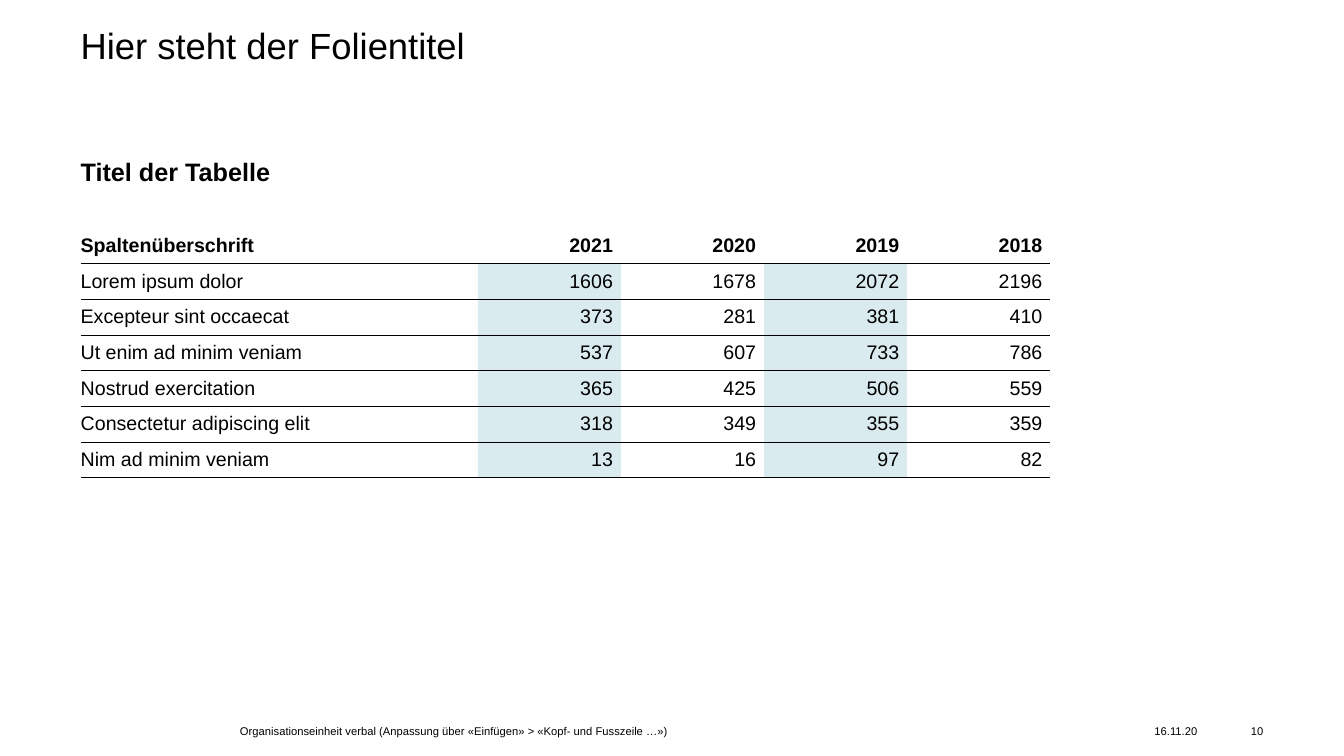
import dataclasses

import lxml.etree
import pptx
import pptx.dml.color
import pptx.enum.text
import pptx.oxml.ns
import pptx.util

Inches = pptx.util.Inches
ALIGN = pptx.enum.text.PP_ALIGN
ANCHOR = pptx.enum.text.MSO_ANCHOR

BLACK = "000000"
WHITE = "FFFFFF"
TEAL = "007A96"
FONT = "Arial"
HEADER = ["Spaltenüberschrift", "2021", "2020", "2019", "2018"]
ROWS = [
    ["Lorem ipsum dolor", 1606, 1678, 2072, 2196],
    ["Excepteur sint occaecat", 373, 281, 381, 410],
    ["Ut enim ad minim veniam", 537, 607, 733, 786],
    ["Nostrud exercitation", 365, 425, 506, 559],
    ["Consectetur adipiscing elit", 318, 349, 355, 359],
    ["Nim ad minim veniam", 13, 16, 97, 82],
]
TABLE_HEIGHT = 2.48
COLUMN_WIDTHS = [3.94] + [1.42] * 4


@dataclasses.dataclass
class Label:
    text: str
    left: float
    top: float
    width: float
    height: float
    size: float
    bold: bool = False
    align: ALIGN = ALIGN.LEFT
    anchor: ANCHOR = ANCHOR.TOP
    line_spacing: float = 1.0


FOOTER = {"top": 7.13, "height": 0.24, "size": 8, "anchor": ANCHOR.MIDDLE}
LABELS = [
    Label("Hier steht der Folientitel", 0.8, 0.28, 11.73, 0.98, 26, line_spacing=0.9),
    Label("Titel der Tabelle", 0.8, 1.55, 11.73, 0.43, 18, bold=True),
    Label("Organisationseinheit verbal (Anpassung über «Einfügen» > «Kopf- und Fusszeile …»)",
          left=2.38, width=5.91, **FOOTER),
    Label("16.11.20", left=11.45, width=0.67, **FOOTER),
    Label("10", left=12.18, width=0.35, align=ALIGN.RIGHT, **FOOTER),
]


def color(value: str) -> pptx.dml.color.RGBColor:
    return pptx.dml.color.RGBColor.from_string(value)


def write_text(frame, text: str, *, size: float, bold: bool = False,
               align: ALIGN = ALIGN.LEFT, line_spacing: float = 1.0) -> None:
    frame.word_wrap = True
    paragraph = frame.paragraphs[0]
    paragraph.alignment = align
    paragraph.line_spacing = line_spacing
    run = paragraph.add_run()
    run.text = text
    run.font.name = FONT
    run.font.size = pptx.util.Pt(size)
    run.font.bold = bold
    run.font.color.rgb = color(BLACK)


def add_label(slide, label: Label) -> None:
    shape = slide.shapes.add_textbox(Inches(label.left), Inches(label.top),
                                     Inches(label.width), Inches(label.height))
    frame = shape.text_frame
    frame.margin_left = frame.margin_top = frame.margin_right = frame.margin_bottom = 0
    frame.vertical_anchor = label.anchor
    write_text(frame, label.text, size=label.size, bold=label.bold,
               align=label.align, line_spacing=label.line_spacing)


def add_child(parent, tag: str, **attributes: str):
    return lxml.etree.SubElement(parent, pptx.oxml.ns.qn(tag), **attributes)


def set_borders(cell, top: float, bottom: float) -> None:
    properties = cell._tc.get_or_add_tcPr()
    for side, width in {"L": 0, "R": 0, "T": top, "B": bottom}.items():
        line = add_child(properties, f"a:ln{side}", w=str(pptx.util.Pt(width)))
        if width:
            add_child(add_child(line, "a:solidFill"), "a:srgbClr", val=BLACK)
        else:
            add_child(line, "a:noFill")


def fill_cell(cell, value: str, opacity: int = 100) -> None:
    cell.fill.solid()
    cell.fill.fore_color.rgb = color(value)
    if opacity < 100:
        swatch = cell._tc.tcPr.find(".//" + pptx.oxml.ns.qn("a:solidFill") + "[last()]")
        swatch = cell._tc.tcPr.find(pptx.oxml.ns.qn("a:solidFill"))[0]
        add_child(swatch, "a:alpha", val=str(opacity * 1000))


def add_figures_table(slide) -> None:
    records = [HEADER] + ROWS
    table = slide.shapes.add_table(
        len(records), len(HEADER), Inches(0.8), Inches(2.26),
        Inches(sum(COLUMN_WIDTHS)), Inches(TABLE_HEIGHT)).table
    table.first_row = False
    table.horz_banding = False
    for column, width in zip(table.columns, COLUMN_WIDTHS):
        column.width = Inches(width)
    for row_index, record in enumerate(records):
        table.rows[row_index].height = Inches(TABLE_HEIGHT / len(records))
        is_header = row_index == 0
        top = {0: 0, 1: 1}.get(row_index, 0.5)
        for column_index, value in enumerate(record):
            cell = table.cell(row_index, column_index)
            cell.margin_left = cell.margin_top = cell.margin_bottom = 0
            cell.margin_right = Inches(0.08)
            cell.vertical_anchor = ANCHOR.MIDDLE
            set_borders(cell, top, 1 if is_header else 0.5)
            if is_header:
                cell.fill.background()
            elif column_index % 2:
                fill_cell(cell, TEAL, opacity=15)
            else:
                fill_cell(cell, WHITE)
            write_text(cell.text_frame, str(value), size=14, bold=is_header,
                       align=ALIGN.RIGHT if column_index else ALIGN.LEFT)


def main() -> None:
    presentation = pptx.Presentation()
    presentation.slide_width = Inches(13.33)
    presentation.slide_height = Inches(7.5)
    slide = presentation.slides.add_slide(presentation.slide_layouts[6])
    for label in LABELS:
        add_label(slide, label)
    add_figures_table(slide)
    presentation.save("out.pptx")


if __name__ == "__main__":
    main()
